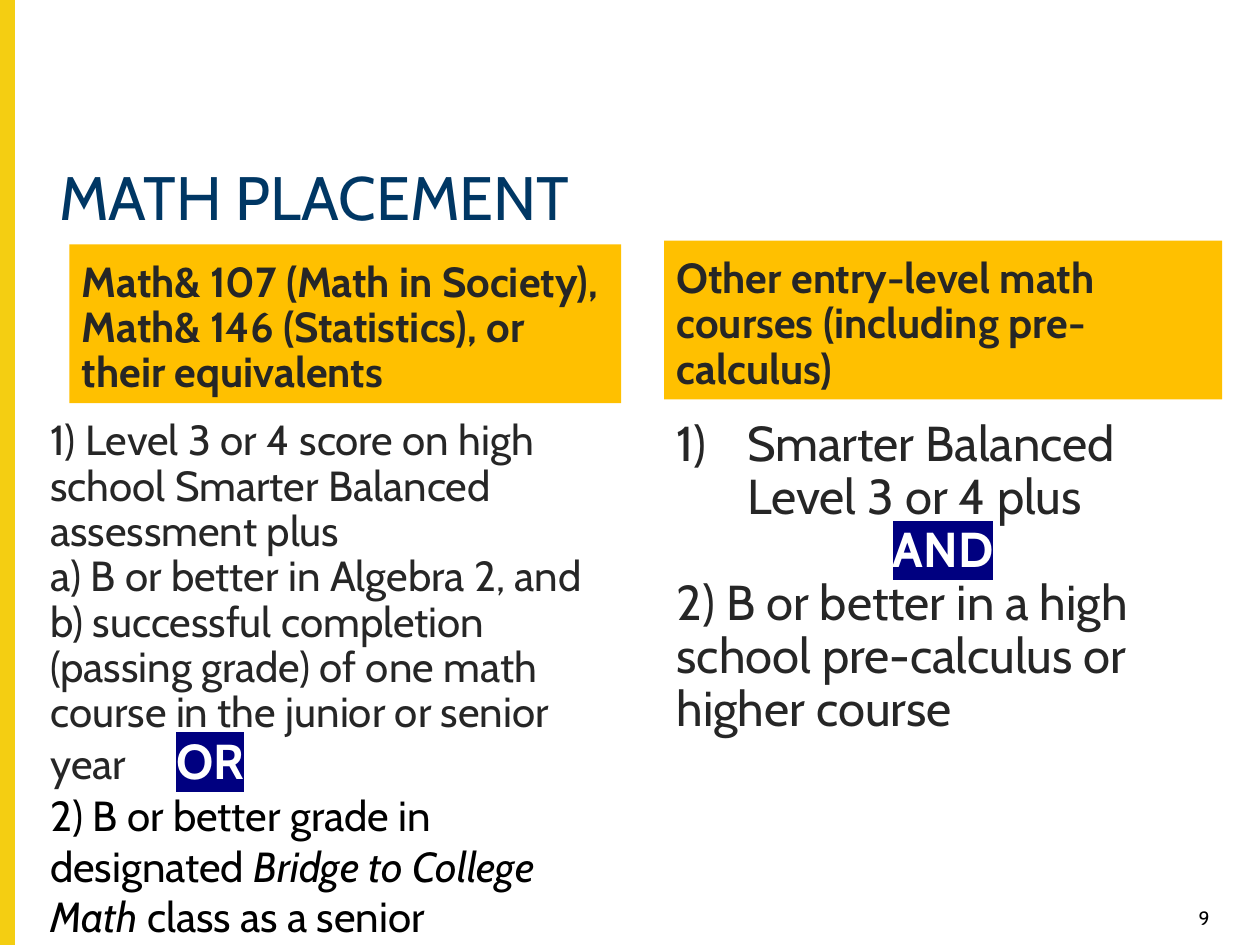
from dataclasses import dataclass

from lxml import etree
from pptx import Presentation
from pptx import util as u
from pptx.dml.color import RGBColor
from pptx.enum import shapes, text
from pptx.oxml.ns import qn


@dataclass(frozen=True)
class Theme:
    font: str = "Cabin"
    bar: str = "F4CE12"
    title: str = "003764"
    banner: str = "FFC000"
    body: str = "262626"
    black: str = "000000"
    white: str = "FFFFFF"
    mark: str = "000080"
    title_size: int = 35
    large_size: int = 28
    body_size: int = 24
    number_size: int = 11


THEME = Theme()
MARKED = dict(color=THEME.white, size=THEME.large_size, bold=True, highlight=THEME.mark)


def place(shape, box):
    shape.left, shape.top, shape.width, shape.height = (u.Inches(n) for n in box)


def prepare(shape, anchor=text.MSO_ANCHOR.TOP):
    frame = shape.text_frame
    frame.word_wrap = True
    frame.auto_size = text.MSO_AUTO_SIZE.NONE
    frame.vertical_anchor = anchor
    return frame


def paint(shape, color):
    shape.fill.solid()
    shape.fill.fore_color.rgb = RGBColor.from_string(color)


def add_span(para, words, color=THEME.body, size=THEME.body_size, bold=False,
             italic=False, highlight=None):
    span = para.add_run()
    span.text = words
    font = span.font
    font.name, font.size, font.bold, font.italic = THEME.font, u.Pt(size), bold, italic
    font.color.rgb = RGBColor.from_string(color)
    if highlight:
        mark = etree.Element(qn("a:highlight"))
        etree.SubElement(mark, qn("a:srgbClr"), val=highlight)
        font._element.find(qn("a:solidFill")).addnext(mark)


def add_para(frame, spans, align=text.PP_ALIGN.LEFT, spacing=0.9, number=None,
             indent=0, tab=None):
    """Add a paragraph made of (words, format) pairs."""
    first = frame.paragraphs[0]
    para = frame.add_paragraph() if first.runs else first
    para.alignment, para.line_spacing = align, spacing
    para.space_before = para.space_after = u.Pt(0)
    props = para._p.get_or_add_pPr()
    props.set("marL", str(u.Inches(indent)))
    props.set("indent", str(u.Inches(-indent)))
    if number:
        etree.SubElement(props, qn("a:buFont"), typeface=THEME.font)
        etree.SubElement(props, qn("a:buAutoNum"), type=number)
    else:
        etree.SubElement(props, qn("a:buNone"))
    if tab:
        stops = etree.SubElement(props, qn("a:tabLst"))
        etree.SubElement(stops, qn("a:tab"), pos=str(u.Inches(tab)), algn="l")
    for words, style in spans:
        add_span(para, words, **style)


def add_side_bar(page, box):
    bar = page.shapes.add_shape(shapes.MSO_SHAPE.RECTANGLE, 0, 0, 0, 0)
    place(bar, box)
    bar.shadow.inherit = False
    paint(bar, THEME.bar)
    bar.line.color.rgb = RGBColor.from_string(THEME.bar)
    bar.line.width = u.Pt(1)


def fill_title(holder, box, words):
    place(holder, box)
    add_para(prepare(holder), [(words, dict(color=THEME.title, size=THEME.title_size))])


def fill_banner(holder, box, words):
    place(holder, box)
    paint(holder, THEME.banner)
    add_para(prepare(holder, text.MSO_ANCHOR.BOTTOM), [(words, dict(bold=True))])


def fill_statistics_path(holder, box):
    place(holder, box)
    frame = prepare(holder)
    add_para(frame, [("1) Level 3 or 4 score on high school Smarter Balanced assessment plus", {})])
    add_para(frame, [("a) B or better in Algebra 2, and", {})])
    add_para(frame, [("b) successful completion (passing grade) of one math course "
                      "in the junior or senior year\t", {}), ("OR", MARKED)], tab=1.2)


def fill_calculus_path(holder, box):
    place(holder, box)
    frame = prepare(holder)
    large = dict(size=THEME.large_size)
    add_para(frame, [("Smarter Balanced Level 3 or 4 plus", large)],
             number="arabicParenR", indent=0.56)
    add_para(frame, [("AND", MARKED)], align=text.PP_ALIGN.CENTER)
    add_para(frame, [("2) B or better in a high school pre-calculus or higher course", large)])


def add_note(page, box, spans, **layout):
    note = page.shapes.add_textbox(0, 0, 0, 0)
    place(note, box)
    add_para(prepare(note), spans, spacing=1.0, **layout)


def build_comparison(deck):
    page = deck.slides.add_slide(deck.slide_layouts[4])
    holders = {holder.placeholder_format.idx: holder for holder in page.placeholders}
    add_side_bar(page, (0, 0, 0.11, 7.5))
    fill_title(holders[0], (0.37, 1.28, 9.12, 0.81), "MATH PLACEMENT")

    # Left column
    fill_banner(holders[1], (0.55, 1.94, 4.38, 1.26),
                "Math& 107 (Math in Society), Math& 146 (Statistics), or their equivalents")
    fill_statistics_path(holders[2], (0.3, 3.28, 4.67, 3.06))
    black = dict(color=THEME.black)
    add_note(page, (0.3, 6.22, 4.56, 1.31), [
        ("2) B or better grade in designated ", black),
        ("Bridge to College Math", dict(black, italic=True)),
        (" class as a senior", black)])

    # Right column
    fill_banner(holders[3], (5.27, 1.91, 4.43, 1.26),
                "Other entry-level math courses (including pre-calculus)")
    fill_calculus_path(holders[4], (5.27, 3.28, 4.43, 2.85))

    # Page number
    add_note(page, (9.2, 7.14, 0.5, 0.21), [("9", dict(black, size=THEME.number_size))],
             align=text.PP_ALIGN.RIGHT)


def main():
    deck = Presentation()
    deck.slide_width, deck.slide_height = u.Inches(10), u.Inches(7.5)
    build_comparison(deck)
    deck.save("out.pptx")


if __name__ == "__main__":
    main()
